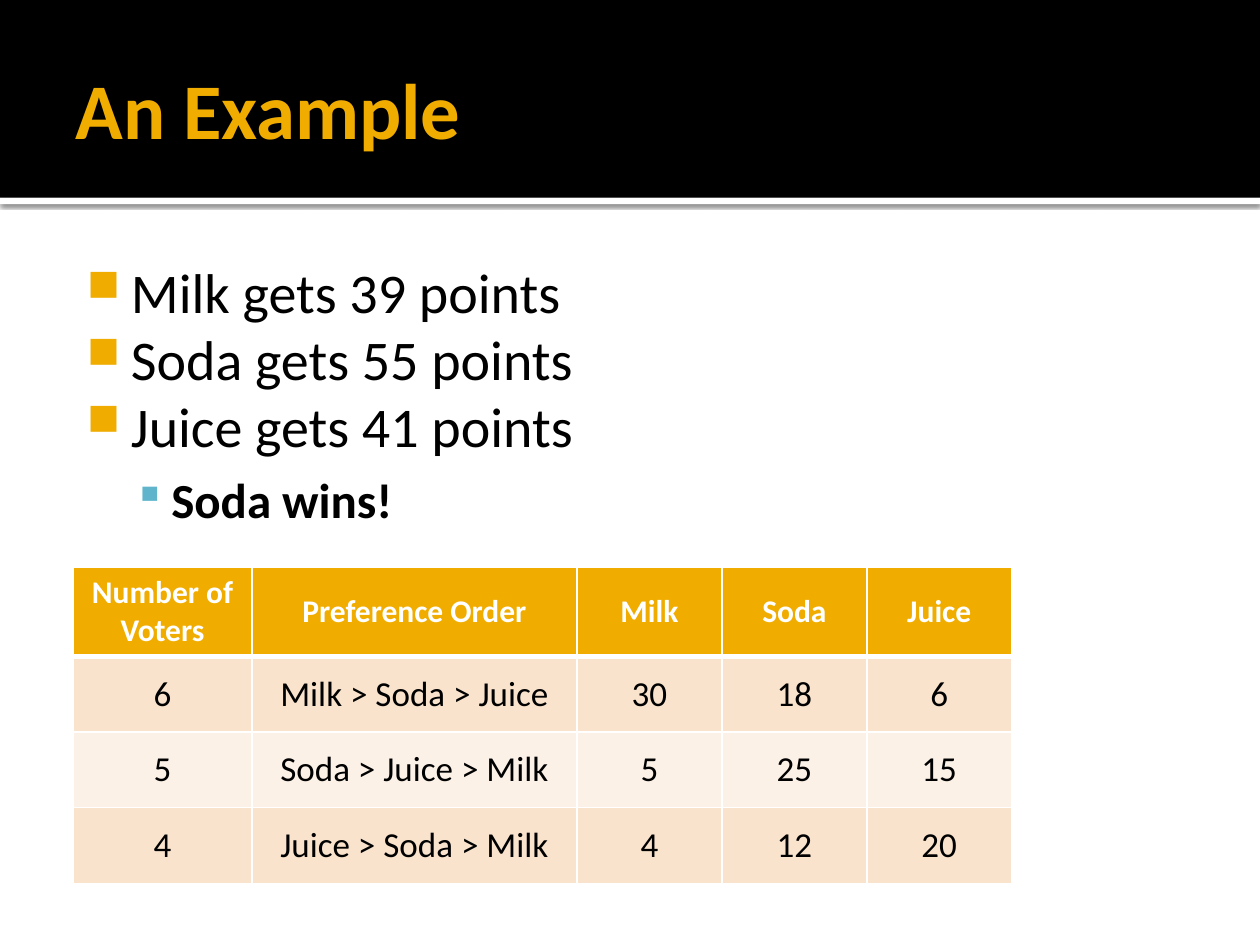
from dataclasses import dataclass

from lxml import etree
from pptx import Presentation
from pptx.dml.color import RGBColor
from pptx.enum.shapes import MSO_SHAPE
from pptx.enum.text import MSO_ANCHOR, MSO_AUTO_SIZE, PP_ALIGN
from pptx.oxml.ns import qn
from pptx.util import Inches, Pt

RECTANGLE = MSO_SHAPE.RECTANGLE
TOP, MIDDLE = MSO_ANCHOR.TOP, MSO_ANCHOR.MIDDLE
LEFT, CENTER = PP_ALIGN.LEFT, PP_ALIGN.CENTER
NO_AUTOFIT = MSO_AUTO_SIZE.NONE
TITLE_ONLY = 5


@dataclass(frozen=True)
class Theme:
    font: str = "Calibri"
    black: str = "000000"
    white: str = "FFFFFF"
    gold: str = "F0AD00"
    teal: str = "60B5CC"
    band_dark: str = "F9E3CC"
    band_light: str = "FCF1E7"
    title_size: int = 45
    bullet_size: int = 32
    sub_bullet_size: int = 28
    header_size: int = 18
    cell_size: int = 20


@dataclass(frozen=True)
class BulletStyle:
    mark: str
    mark_color: str
    mark_percent: int
    margin: float
    hanging: float
    size: int
    bold: bool
    level: int
    space_before: int


THEME = Theme()
POINT = BulletStyle("■", THEME.gold, 80, 0.48, 0.35, THEME.bullet_size, False, 0, 0)
RESULT = BulletStyle("▪", THEME.teal, 90, 0.8, 0.3, THEME.sub_bullet_size, True, 1, 6)
BULLETS = [
    ("Milk gets 39 points", POINT),
    ("Soda gets 55 points", POINT),
    ("Juice gets 41 points", POINT),
    ("Soda wins!", RESULT),
]
COLUMN_WIDTHS = [1.42, 2.58, 1.15, 1.15, 1.15]
ROW_HEIGHTS = [0.7, 0.6, 0.6, 0.6]
VOTES = [
    ["Number of Voters", "Preference Order", "Milk", "Soda", "Juice"],
    ["6", "Milk > Soda > Juice", "30", "18", "6"],
    ["5", "Soda > Juice > Milk", "5", "25", "15"],
    ["4", "Juice > Soda > Milk", "4", "12", "20"],
]


def add_child(parent, tag: str, **attributes):
    return etree.SubElement(
        parent, qn(tag), {name: str(value) for name, value in attributes.items()}
    )


def add_run(paragraph, text: str, size: int, color: str, bold: bool = False) -> None:
    run = paragraph.add_run()
    run.text = text
    run.font.name = THEME.font
    run.font.size = Pt(size)
    run.font.bold = bold
    run.font.color.rgb = RGBColor.from_string(color)


def set_frame(frame, anchor, left: float, top: float, right: float, bottom: float) -> None:
    frame.word_wrap = True
    frame.auto_size = NO_AUTOFIT
    frame.vertical_anchor = anchor
    frame.margin_left, frame.margin_top = Inches(left), Inches(top)
    frame.margin_right, frame.margin_bottom = Inches(right), Inches(bottom)


def add_bar(slide, top: float, height: float, color: str):
    bar = slide.shapes.add_shape(RECTANGLE, 0, Inches(top), Inches(10), Inches(height))
    bar.shadow.inherit = False
    bar.fill.solid()
    bar.fill.fore_color.rgb = RGBColor.from_string(color)
    bar.line.fill.background()
    return bar


def add_shadow(shape) -> None:
    effects = shape._element.spPr.find(qn("a:effectLst"))
    shadow = add_child(
        effects, "a:outerShdw", blurRad=Pt(2.5), dist=Pt(0.8), dir=90 * 60000, rotWithShape=0
    )
    color = add_child(shadow, "a:srgbClr", val=THEME.black)
    add_child(color, "a:alpha", val=60000)


def add_title(slide, text: str, banner) -> None:
    title = slide.shapes.title
    title.left, title.top = Inches(0.5), Inches(0.17)
    title.width, title.height = Inches(9), Inches(1.37)
    banner._element.addnext(title._element)
    set_frame(title.text_frame, MIDDLE, 0.1, 0.05, 0.05, 0.05)
    paragraph = title.text_frame.paragraphs[0]
    paragraph.alignment = LEFT
    add_run(paragraph, text, THEME.title_size, THEME.gold, True)


def format_bullet(paragraph, style: BulletStyle) -> None:
    paragraph.level = style.level
    paragraph.space_before = Pt(style.space_before)
    properties = paragraph._p.get_or_add_pPr()
    properties.set("marL", str(Inches(style.margin)))
    properties.set("indent", str(-Inches(style.hanging)))
    add_child(add_child(properties, "a:buClr"), "a:srgbClr", val=style.mark_color)
    add_child(properties, "a:buSzPct", val=style.mark_percent * 1000)
    add_child(properties, "a:buChar", char=style.mark)


def add_bullets(slide) -> None:
    box = slide.shapes.add_textbox(Inches(0.5), Inches(1.94), Inches(9), Inches(5.06))
    frame = box.text_frame
    set_frame(frame, TOP, 0.06, 0.1, 0.1, 0.05)
    for index, (text, style) in enumerate(BULLETS):
        paragraph = frame.add_paragraph() if index else frame.paragraphs[0]
        format_bullet(paragraph, style)
        add_run(paragraph, text, style.size, THEME.black, style.bold)


def set_borders(cell, top: int, bottom: int) -> None:
    properties = cell._tc.get_or_add_tcPr()
    for side, width in (("L", 1), ("R", 1), ("T", top), ("B", bottom)):
        line = add_child(properties, f"a:ln{side}", w=Pt(width))
        add_child(add_child(line, "a:solidFill"), "a:srgbClr", val=THEME.white)


def format_cell(cell, text: str, row: int) -> None:
    header = row == 0
    band = THEME.band_dark if row % 2 else THEME.band_light
    set_borders(cell, 3 if row == 1 else 1, 3 if header else 1)
    cell.fill.solid()
    cell.fill.fore_color.rgb = RGBColor.from_string(THEME.gold if header else band)
    cell.vertical_anchor = MIDDLE
    paragraph = cell.text_frame.paragraphs[0]
    paragraph.alignment = CENTER
    size = THEME.header_size if header else THEME.cell_size
    add_run(paragraph, text, size, THEME.white if header else THEME.black, header)


def add_votes_table(slide) -> None:
    table = slide.shapes.add_table(
        len(ROW_HEIGHTS), len(COLUMN_WIDTHS), Inches(0.58), Inches(4.5),
        Inches(sum(COLUMN_WIDTHS)), Inches(sum(ROW_HEIGHTS)),
    ).table
    for column, width in zip(table.columns, COLUMN_WIDTHS):
        column.width = Inches(width)
    for row, (height, texts) in enumerate(zip(ROW_HEIGHTS, VOTES)):
        table.rows[row].height = Inches(height)
        for column, text in enumerate(texts):
            format_cell(table.cell(row, column), text, row)


def main() -> None:
    presentation = Presentation()
    presentation.slide_width, presentation.slide_height = Inches(10), Inches(7.5)
    slide = presentation.slides.add_slide(presentation.slide_layouts[TITLE_ONLY])
    add_shadow(add_bar(slide, 1.57, 0.05, THEME.white))
    banner = add_bar(slide, 0, 1.57, THEME.black)
    add_title(slide, "An Example", banner)
    add_bullets(slide)
    add_votes_table(slide)
    presentation.save("out.pptx")


if __name__ == "__main__":
    main()
